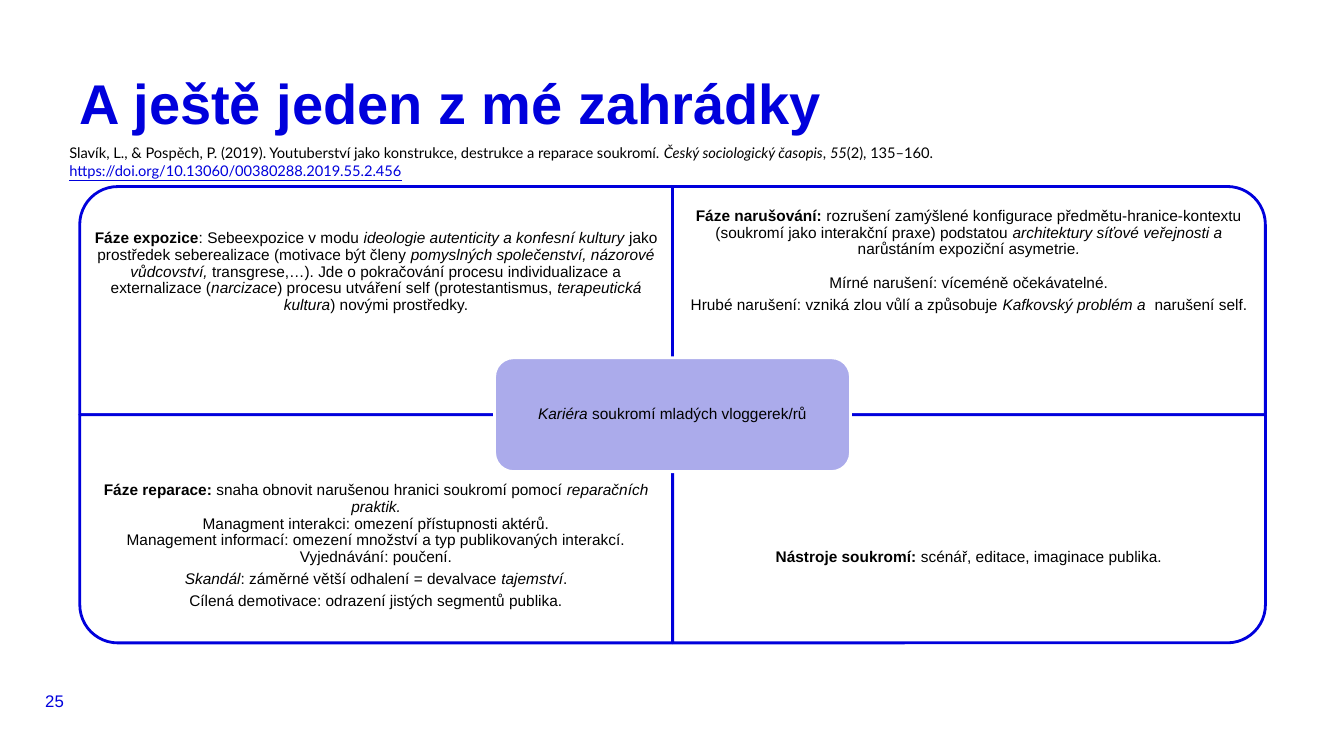
from pptx import Presentation
from pptx.dml.color import RGBColor
from pptx.enum.shapes import MSO_SHAPE
from pptx.enum.text import MSO_ANCHOR, MSO_AUTO_SIZE, PP_ALIGN
from pptx.util import Cm, Pt

BLUE, LILAC, WHITE, BLACK = "0000DC", "ABABEB", "FFFFFF", "000000"
GAP = 3.85  # points after a paragraph

# Content: a line is (points after, runs); a run is (text, style)
TITLE = [(0, [("A ještě jeden z mé zahrádky", "b")])]
PAGE = [(0, [("25", "")])]
SOURCE = [(0, [
    ("Slavík, L., & Pospěch, P. (2019). Youtuberství jako konstrukce, "
     "destrukce a reparace soukromí. ", ""),
    ("Český sociologický časopis", "i"), (", ", ""), ("55", "i"),
    ("(2), 135–160. ", ""),
    ("https://doi.org/10.13060/00380288.2019.55.2.456", "u")])]
CORE = [(0, [("Kariéra", "i"), (" soukromí mladých vloggerek/rů", "")])]

EXPOSE = [(GAP, [
    ("Fáze expozice", "b"), (": Sebeexpozice v modu ", ""),
    ("ideologie autenticity a konfesní kultury", "i"),
    (" jako prostředek seberealizace (motivace být členy ", ""),
    ("pomyslných společenství, názorové vůdcovství, ", "i"),
    ("transgrese,…). Jde o pokračování procesu individualizace a "
     "externalizace (", ""),
    ("narcizace", "i"),
    (") procesu utváření self (protestantismus, ", ""),
    ("terapeutická kultura", "i"), (") novými prostředky.", "")])]
BREACH = [
    (11.8, [
        ("Fáze narušování: ", "b"),
        ("rozrušení zamýšlené konfigurace předmětu-hranice-kontextu "
         "(soukromí jako interakční praxe) podstatou ", ""),
        ("architektury síťové veřejnosti a ", "i"),
        ("narůstáním expoziční asymetrie", ""), (".", "i")]),
    (GAP, [("Mírné narušení: víceméně očekávatelné.", "")]),
    (GAP, [
        ("Hrubé narušení: vzniká zlou vůlí a způsobuje ", ""),
        ("Kafkovský problém a ", "i"), (" narušení self.", "")])]
REPAIR = [
    (0, [
        ("Fáze reparace: ", "b"),
        ("snaha obnovit narušenou hranici soukromí pomocí ", ""),
        ("reparačních praktik.", "i")]),
    (0, [("Managment interakci: omezení přístupnosti aktérů.", "")]),
    (0, [("Management informací: omezení množství a typ publikovaných "
          "interakcí.", "")]),
    (GAP, [("Vyjednávání: poučení.", "")]),
    (GAP, [
        ("Skandál", "i"), (": záměrné větší odhalení = devalvace ", ""),
        ("tajemství", "i"), (".", "")]),
    (GAP, [("Cílená demotivace: odrazení jistých segmentů publika.", "")])]
TOOLS = [(GAP, [("Nástroje soukromí: ", "b"),
                ("scénář, editace, imaginace publika.", "")])]

# Column, row, rotation, bottom inset, lines
QUADS = [(0, 0, 270, 0.23, EXPOSE), (1, 0, 0, 0.79, BREACH),
         (0, 1, 180, 0.79, REPAIR), (1, 1, 90, 0.23, TOOLS)]

LEFT, TOP, WIDE, HIGH = 2.01, 4.7, 14.94, 5.75
BODY = 4.31  # text height in a quadrant
CORE_W, CORE_H = 8.97, 2.87


def color(code):
    return RGBColor.from_string(code)


def write(frame, lines, size=11, font="Arial", ink=BLACK, align=PP_ALIGN.CENTER,
          space=0.9, anchor=MSO_ANCHOR.MIDDLE, inset=(0, 0, 0, 0), wrap=True):
    frame.auto_size = MSO_AUTO_SIZE.NONE
    frame.word_wrap = wrap
    frame.vertical_anchor = anchor
    (frame.margin_left, frame.margin_top,
     frame.margin_right, frame.margin_bottom) = [Cm(n) for n in inset]
    for i, (after, runs) in enumerate(lines):
        para = frame.add_paragraph() if i else frame.paragraphs[0]
        para.alignment = align
        para.line_spacing = space
        para.space_before, para.space_after = Pt(0), Pt(after)
        for words, style in runs:
            run = para.add_run()
            run.text = words
            face = run.font
            face.name, face.size = font, Pt(size)
            face.bold, face.italic = style == "b", style == "i"
            face.underline = style == "u"
            face.color.rgb = color(BLUE if style == "u" else ink)


def place(kind, x, y, w, h, fill, edge):
    shape = slide.shapes.add_shape(kind, Cm(x), Cm(y), Cm(w), Cm(h))
    shape.shadow.inherit = False
    shape.fill.solid()
    shape.fill.fore_color.rgb = color(fill)
    shape.line.color.rgb = color(edge)
    shape.line.width = Pt(2)
    return shape


def box(x, y, w, h, lines, **form):
    area = slide.shapes.add_textbox(Cm(x), Cm(y), Cm(w), Cm(h))
    write(area.text_frame, lines, **form)


deck = Presentation()
deck.slide_width, deck.slide_height = Cm(33.87), Cm(19.05)
slide = deck.slides.add_slide(deck.slide_layouts[5])

# Title and page number
head = slide.shapes.title
head.left, head.top, head.width, head.height = Cm(2.01), Cm(2.01), Cm(29.87), Cm(1.24)
write(head.text_frame, TITLE, size=40, ink=BLUE, align=PP_ALIGN.LEFT,
      space=Pt(40), anchor=MSO_ANCHOR.TOP)
box(1.14, 17.3, 0.71, 0.71, PAGE, size=12, ink=BLUE, align=PP_ALIGN.LEFT,
    space=1.0, wrap=False)

# Four quadrants, each with its round corner outwards
for col, row, turn, base, lines in QUADS:
    x, y = LEFT + col * WIDE, TOP + row * HIGH
    w, h = (HIGH, WIDE) if turn % 180 else (WIDE, HIGH)
    quad = place(MSO_SHAPE.ROUND_1_RECTANGLE, x + (WIDE - w) / 2,
                 y + (HIGH - h) / 2, w, h, WHITE, BLUE)
    quad.rotation = turn
    box(x, y + row * (HIGH - BODY), WIDE, BODY, lines,
        inset=(0.23, 0.23, 0.23, base))

# Centre label
core = place(MSO_SHAPE.ROUNDED_RECTANGLE, LEFT + WIDE - CORE_W / 2,
             TOP + HIGH - CORE_H / 2, CORE_W, CORE_H, LILAC, WHITE)
write(core.text_frame, CORE, inset=(0.13, 0.13, 0.13, 0.13))

# Citation
box(1.5, 3.5, 30.05, 1.2, SOURCE, size=10.5, font="Lato", align=PP_ALIGN.LEFT,
    space=1.0, anchor=MSO_ANCHOR.TOP, inset=(0.25, 0.13, 0.25, 0.13))

deck.save("out.pptx")
